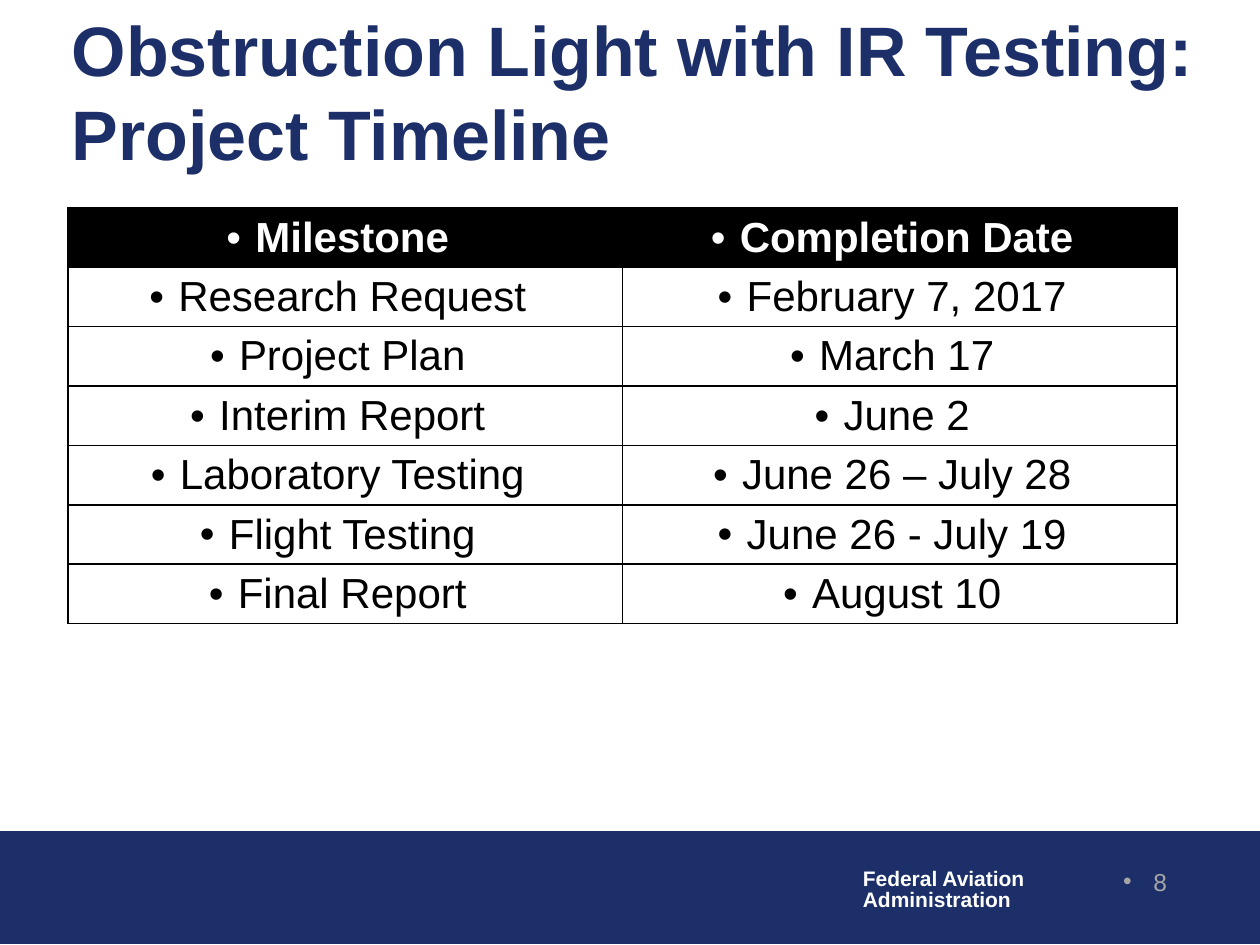
from lxml.etree import SubElement
from pptx import Presentation
from pptx.dml.color import RGBColor
from pptx.enum.shapes import MSO_SHAPE
from pptx.enum.text import MSO_ANCHOR, MSO_AUTO_SIZE, PP_ALIGN
from pptx.oxml.ns import qn
from pptx.util import Inches, Pt

NAVY = RGBColor(0x1D, 0x2F, 0x68)
WHITE = RGBColor(0xFF, 0xFF, 0xFF)
BLACK = RGBColor(0, 0, 0)
GRAY = RGBColor(0xA6, 0xA6, 0xA6)

MILESTONES = [
    ("Milestone", "Completion Date"),
    ("Research Request", "February 7, 2017"),
    ("Project Plan", "March 17"),
    ("Interim Report", "June 2"),
    ("Laboratory Testing", "June 26 – July 28"),
    ("Flight Testing", "June 26 - July 19"),
    ("Final Report", "August 10"),
]


def set_font(p, size, color, bold=False):
    """Format every run of a paragraph."""
    for r in p.runs:
        r.font.name = "Arial"
        r.font.size = Pt(size)
        r.font.bold = bold
        r.font.color.rgb = color


def add_bullet(p, indent):
    """Give a paragraph a round bullet with a hanging indent."""
    pPr = p._p.get_or_add_pPr()
    pPr.set("marL", str(Inches(indent)))
    pPr.set("indent", str(-Inches(indent)))
    SubElement(pPr, qn("a:buFont"), typeface="Arial")
    SubElement(pPr, qn("a:buChar"), char="•")


def add_borders(cell):
    """Draw a thin black line on each side of a cell."""
    tcPr = cell._tc.get_or_add_tcPr()
    for side in ("lnL", "lnR", "lnT", "lnB"):
        ln = SubElement(tcPr, qn(f"a:{side}"), w=str(Pt(1)))
        fill = SubElement(ln, qn("a:solidFill"))
        SubElement(fill, qn("a:srgbClr"), val=str(BLACK))


def add_title(s, left, top, width, height):
    """Place the two-line slide title."""
    sp = s.shapes.title
    sp.left, sp.top, sp.width, sp.height = left, top, width, height
    tf = sp.text_frame
    tf.text = "Obstruction Light with IR Testing:\vProject Timeline"
    tf.word_wrap = True
    tf.auto_size = MSO_AUTO_SIZE.NONE
    tf.vertical_anchor = MSO_ANCHOR.MIDDLE
    p = tf.paragraphs[0]
    p.alignment = PP_ALIGN.LEFT
    set_font(p, 40, NAVY, True)


def add_timeline(s, left, top, width, height):
    """Place the milestone table with a black header row."""
    frame = s.shapes.add_table(len(MILESTONES), 2, left, top, width, height)
    for i, row in enumerate(MILESTONES):
        header = i == 0
        for j, text in enumerate(row):
            cell = frame.table.cell(i, j)
            cell.margin_top = cell.margin_bottom = Inches(0.03)
            cell.margin_right = Inches(0.22)
            cell.vertical_anchor = MSO_ANCHOR.MIDDLE
            add_borders(cell)
            cell.fill.solid()
            cell.fill.fore_color.rgb = BLACK if header else WHITE
            p = cell.text_frame.paragraphs[0]
            p.text = text
            p.alignment = PP_ALIGN.CENTER
            add_bullet(p, 0.23)
            set_font(p, 24, WHITE if header else BLACK, header)


def add_footer(s, left, top, width, height):
    """Place the navy band with the agency name and slide number."""
    band = s.shapes.add_shape(MSO_SHAPE.RECTANGLE, left, top, width, height)
    band.shadow.inherit = False
    band.fill.solid()
    band.fill.fore_color.rgb = NAVY
    band.line.color.rgb = NAVY
    band.line.width = Pt(0.75)

    agency = s.shapes.add_textbox(left + Inches(6.75), top + Inches(0.25),
                                  Inches(1.5), Inches(0.44))
    agency.text_frame.text = "Federal Aviation\nAdministration"
    for p in agency.text_frame.paragraphs:
        p.line_spacing = 0.85
        set_font(p, 12, WHITE, True)

    number = s.shapes.add_textbox(left + Inches(8.18), top + Inches(0.23),
                                  Inches(1.18), Inches(0.5))
    number.text_frame.word_wrap = True
    p = number.text_frame.paragraphs[0]
    p.text = "8"
    p.alignment = PP_ALIGN.RIGHT
    add_bullet(p, 0.24)
    set_font(p, 14, GRAY)


def main():
    """Build and save the slide."""
    prs = Presentation()
    prs.slide_width, prs.slide_height = Inches(10), Inches(7.5)
    s = prs.slides.add_slide(prs.slide_layouts[5])
    add_footer(s, 0, Inches(6.6), prs.slide_width, Inches(0.89))
    add_title(s, Inches(0.47), Inches(0.38), Inches(9.27), Inches(0.67))
    add_timeline(s, Inches(0.54), Inches(1.65), Inches(8.8), Inches(3.3))
    prs.save("out.pptx")


if __name__ == "__main__":
    main()
